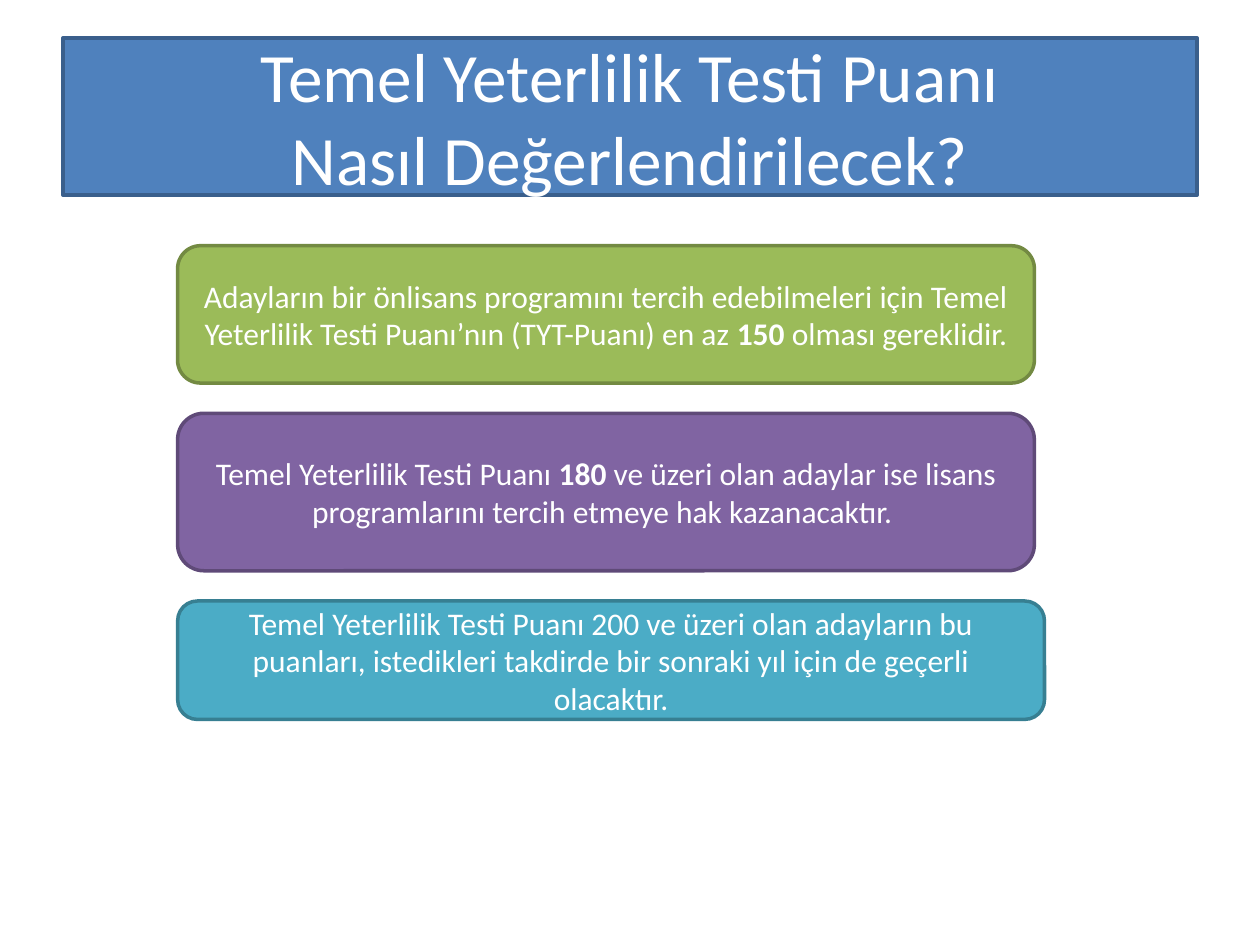
from pptx import Presentation
from pptx.dml.color import RGBColor
from pptx.enum.shapes import MSO_SHAPE as Shape
from pptx.enum.text import MSO_ANCHOR as Anchor, MSO_AUTO_SIZE as Fit, PP_ALIGN as Align
from pptx.util import Inches, Pt

WHITE = RGBColor(0xFF, 0xFF, 0xFF)
BLUE = RGBColor(0x4F, 0x81, 0xBD)
NAVY = RGBColor(0x3A, 0x5F, 0x8C)
GREEN = RGBColor(0x9B, 0xBB, 0x59)
MOSS = RGBColor(0x73, 0x8A, 0x42)
PURPLE = RGBColor(0x80, 0x64, 0xA2)
PLUM = RGBColor(0x5F, 0x4A, 0x78)
AQUA = RGBColor(0x4B, 0xAC, 0xC6)
TEAL = RGBColor(0x37, 0x7F, 0x92)


def paint(box, fill, edge):
    """Colour a box and return its centred first paragraph."""
    box.fill.solid()
    box.fill.fore_color.rgb = fill
    box.line.color.rgb = edge
    box.line.width = Pt(2)
    frame = box.text_frame
    frame.word_wrap = True
    frame.auto_size = Fit.NONE
    frame.vertical_anchor = Anchor.MIDDLE
    para = frame.paragraphs[0]
    para.alignment = Align.CENTER
    return para


def write(para, text, size, bold=False):
    run = para.add_run()
    run.text = text
    font = run.font
    font.name = "Calibri"
    font.size = Pt(size)
    font.bold = bold
    font.color.rgb = WHITE


deck = Presentation()
deck.slide_width, deck.slide_height = Inches(10), Inches(7.5)
wide, high = deck.slide_width, deck.slide_height
slide = deck.slides.add_slide(deck.slide_layouts[5])

# Title band
title = slide.shapes.title
title.left, title.top = int(wide * 0.05), int(high * 0.04)
title.width, title.height = int(wide * 0.9), Inches(1.25)
para = paint(title, BLUE, NAVY)
write(para, "Temel Yeterlilik Testi Puanı", 39.6)
para.add_line_break()
write(para, "Nasıl Değerlendirilecek?", 39.6)

# Score rules: width, height, fill, edge, runs (every second run is bold)
rules = [
    (6.8, 1.09, GREEN, MOSS,
     ["Adayların bir önlisans programını tercih edebilmeleri için Temel "
      "Yeterlilik Testi Puanı’nın (TYT-Puanı) en az ",
      "150", " olması gereklidir."]),
    (6.8, 1.25, PURPLE, PLUM,
     ["Temel Yeterlilik Testi Puanı ", "180",
      " ve üzeri olan adaylar ise lisans programlarını tercih etmeye "
      "hak kazanacaktır. "]),
    (6.88, 0.94, AQUA, TEAL,
     ["Temel Yeterlilik Testi Puanı 200 ve üzeri olan adayların bu puanları, "
      "istedikleri takdirde bir sonraki yıl için de geçerli olacaktır."]),
]
left, top, gap = Inches(1.41), int(high * 0.26), Inches(0.24)
for width, height, fill, edge, runs in rules:
    box = slide.shapes.add_shape(
        Shape.ROUNDED_RECTANGLE, left, top, Inches(width), Inches(height))
    box.shadow.inherit = False
    para = paint(box, fill, edge)
    for i, text in enumerate(runs):
        write(para, text, 18, bold=i % 2 == 1)
    top += box.height + gap

deck.save("out.pptx")
